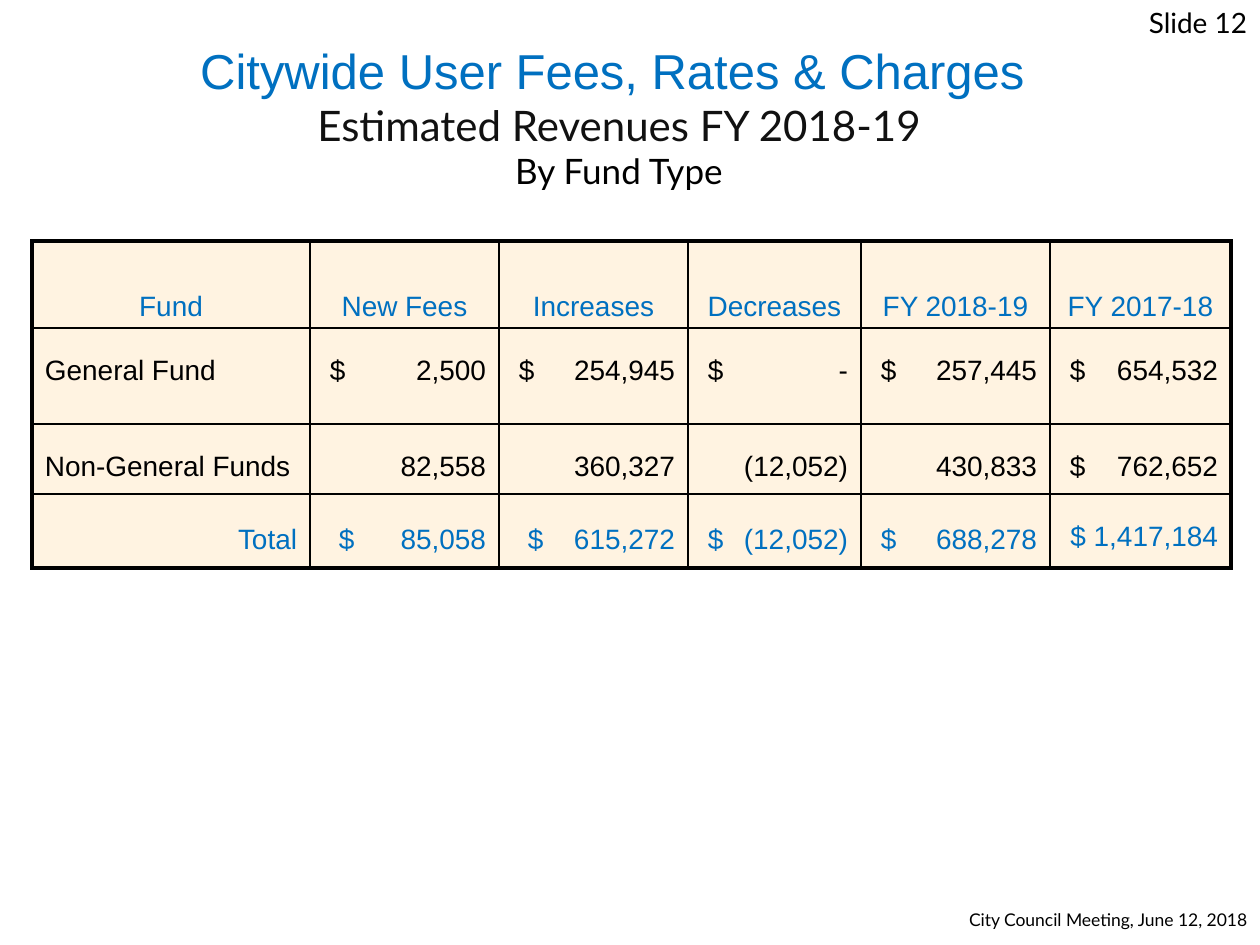
import pptx
import pptx.dml.color
import pptx.enum.text
import pptx.oxml.ns
import pptx.util
from lxml import etree

BLUE = pptx.dml.color.RGBColor(0x00, 0x70, 0xC0)
BLACK = pptx.dml.color.RGBColor(0x00, 0x00, 0x00)
CHARCOAL = pptx.dml.color.RGBColor(0x11, 0x11, 0x11)
CREAM = pptx.dml.color.RGBColor(0xFF, 0xF3, 0xE1)

ALIGN = pptx.enum.text.PP_ALIGN
ANCHOR = pptx.enum.text.MSO_ANCHOR

SIDE_INSET, EDGE_INSET = 13, 6
COLUMN_WIDTHS = [278, 189, 189, 173, 189, 181]
ROW_HEIGHTS = [87, 96, 70, 74]
FUNDS = [
    ["Fund", "New Fees", "Increases", "Decreases", "FY 2018-19", "FY 2017-18"],
    ["General Fund", "$\t2,500", "$\t254,945", "$\t-", "$\t257,445", "$\t654,532"],
    ["Non-General Funds", "82,558", "360,327", "(12,052)", "430,833", "$\t762,652"],
    ["Total", "$\t85,058", "$\t615,272", "$\t(12,052)", "$\t688,278", "$ 1,417,184"],
]
HEADER, TOTAL = 0, len(FUNDS) - 1
LAST_COLUMN = len(COLUMN_WIDTHS) - 1


def px(length):
    return pptx.util.Emu(round(length * 914400 / 126))


def add_child(parent, tag, **attributes):
    return etree.SubElement(parent, pptx.oxml.ns.qn(tag), attributes)


def style(font, name, size, color):
    font.name = name
    font.size = pptx.util.Pt(size)
    font.color.rgb = color


def place(shape, box):
    shape.left, shape.top, shape.width, shape.height = map(px, box)


def fill_heading(title, box):
    place(title, box)
    frame = title.text_frame
    frame.text = ("Citywide User Fees, Rates & Charges \v"
                  "Estimated Revenues FY 2018-19\nBy Fund Type")
    frame.auto_size = pptx.enum.text.MSO_AUTO_SIZE.NONE
    frame.vertical_anchor = ANCHOR.MIDDLE
    looks = [("Arial", 28, BLUE), ("Lato", 24, CHARCOAL), ("Lato", 20, BLACK)]
    runs = [run for paragraph in frame.paragraphs for run in paragraph.runs]
    for run, look in zip(runs, looks):
        style(run.font, *look)
    for paragraph in frame.paragraphs:
        paragraph.alignment = ALIGN.CENTER


def add_corner_note(slide, box, text, size, top_inset=EDGE_INSET):
    note = slide.shapes.add_textbox(*map(px, box))
    frame = note.text_frame
    frame.word_wrap = True
    frame.margin_right = px(SIDE_INSET)
    frame.margin_top = px(top_inset)
    frame.text = text
    frame.paragraphs[0].alignment = ALIGN.RIGHT
    style(frame.paragraphs[0].runs[0].font, "Lato", size, BLACK)


def add_borders(cell, row, column):
    """Heavy rules on the table's outline, thin rules inside it."""
    outer_sides = {"a:lnL": column == 0, "a:lnR": column == LAST_COLUMN,
                   "a:lnT": row == HEADER, "a:lnB": row == TOTAL}
    properties = cell._tc.get_or_add_tcPr()
    for side, is_outer in outer_sides.items():
        width = pptx.util.Pt(2.25 if is_outer else 1)
        rule = add_child(properties, side, w=str(int(width)))
        add_child(add_child(rule, "a:solidFill"), "a:srgbClr", val=str(BLACK))


def dollar_inset(row, column):
    return 29 if row == TOTAL and column in (1, 2) else 20


def top_inset(row, column):
    if row == HEADER:
        return EDGE_INSET
    return 30 if row == TOTAL and column < LAST_COLUMN else 27


def cell_alignment(row, column, text):
    if row == HEADER:
        return ALIGN.CENTER
    if "\t" in text or (column == 0 and row != TOTAL):
        return ALIGN.LEFT
    return ALIGN.RIGHT


def fill_cell(cell, row, column):
    text = FUNDS[row][column]
    left_inset = dollar_inset(row, column) if "\t" in text else SIDE_INSET
    add_borders(cell, row, column)
    cell.fill.solid()
    cell.fill.fore_color.rgb = CREAM
    cell.vertical_anchor = ANCHOR.BOTTOM if row == HEADER else ANCHOR.TOP
    cell.margin_left, cell.margin_right = px(left_inset), px(SIDE_INSET)
    cell.margin_top, cell.margin_bottom = px(top_inset(row, column)), px(EDGE_INSET)

    cell.text_frame.text = text
    paragraph = cell.text_frame.paragraphs[0]
    paragraph.alignment = cell_alignment(row, column, text)
    if "\t" in text:
        amount_edge = px(COLUMN_WIDTHS[column] - left_inset - SIDE_INSET)
        tabs = add_child(paragraph._p.get_or_add_pPr(), "a:tabLst")
        add_child(tabs, "a:tab", pos=str(int(amount_edge)), algn="r")
    color = BLUE if row in (HEADER, TOTAL) else BLACK
    for run in paragraph.runs:
        style(run.font, "Arial", 16, color)


def add_fund_table(slide, left, top):
    box = (left, top, sum(COLUMN_WIDTHS), sum(ROW_HEIGHTS))
    table = slide.shapes.add_table(
        len(ROW_HEIGHTS), len(COLUMN_WIDTHS), *map(px, box)).table
    table.first_row = table.horz_banding = False
    for column, width in zip(table.columns, COLUMN_WIDTHS):
        column.width = px(width)
    for row, height in enumerate(ROW_HEIGHTS):
        table.rows[row].height = px(height)
        for column in range(len(COLUMN_WIDTHS)):
            fill_cell(table.cell(row, column), row, column)


def main():
    deck = pptx.Presentation()
    deck.slide_width, deck.slide_height = px(1260), px(945)
    slide = deck.slides.add_slide(deck.slide_layouts.get_by_name("Title Only"))
    fill_heading(slide.shapes.title, (94, 53, 1050, 126))
    add_fund_table(slide, 32, 241)
    add_corner_note(slide, (861, 882, 399, 63),
                    "City Council Meeting, June 12, 2018", 10, top_inset=27)
    add_corner_note(slide, (966, 0, 294, 63), "Slide 12", 16)
    deck.save("out.pptx")


if __name__ == "__main__":
    main()
